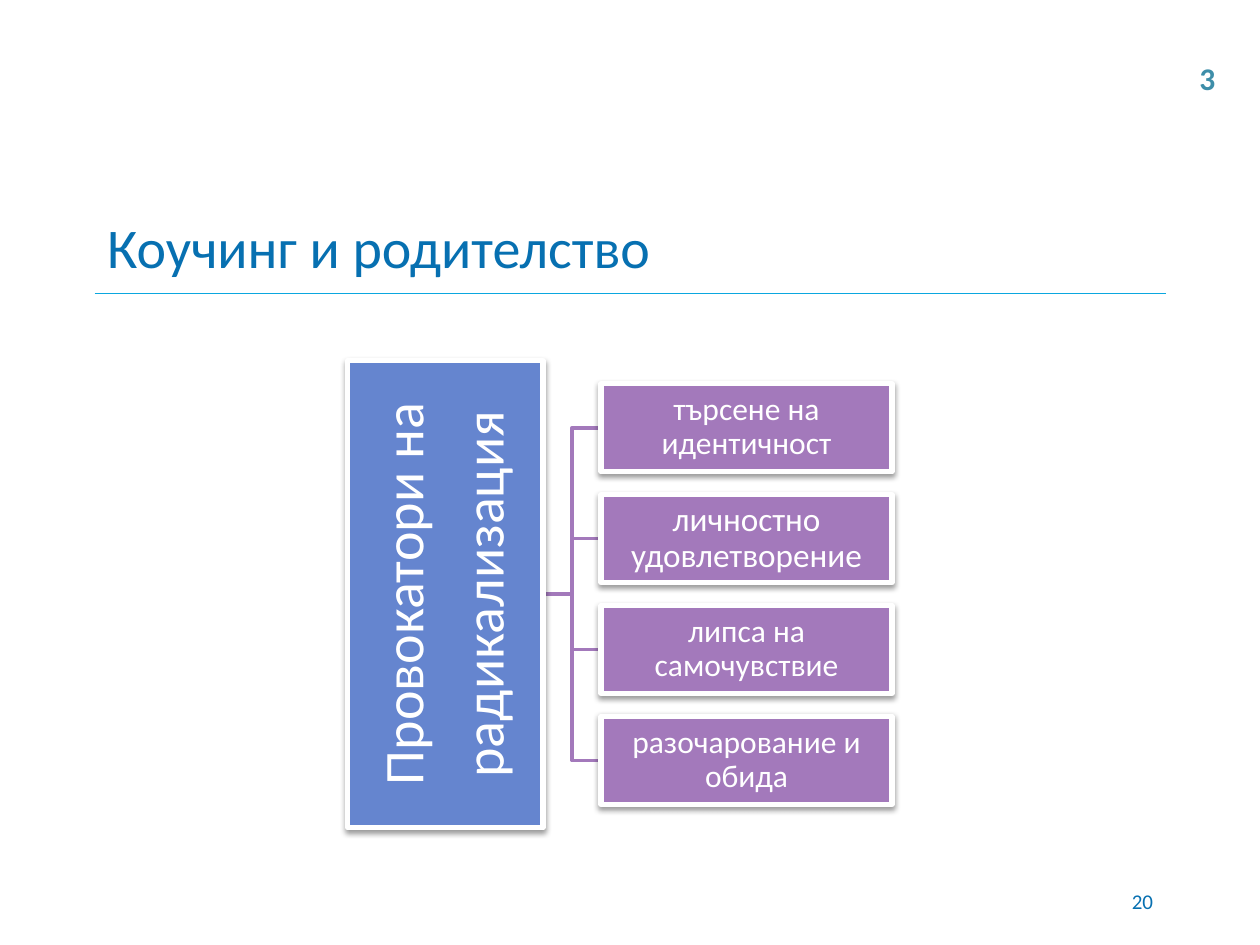
from lxml import etree
from pptx import Presentation
from pptx.dml.color import RGBColor
from pptx.enum.shapes import MSO_CONNECTOR, MSO_SHAPE
from pptx.enum.text import MSO_ANCHOR, PP_ALIGN
from pptx.oxml.ns import qn
from pptx.util import Inches, Pt

LEFT, CENTER, RIGHT = PP_ALIGN.LEFT, PP_ALIGN.CENTER, PP_ALIGN.RIGHT
TOP, MIDDLE = MSO_ANCHOR.TOP, MSO_ANCHOR.MIDDLE
RECTANGLE, STRAIGHT = MSO_SHAPE.RECTANGLE, MSO_CONNECTOR.STRAIGHT

TITLE_BLUE = RGBColor(0x07, 0x70, 0xB1)
RULE_BLUE = RGBColor(0x0B, 0xA7, 0xDF)
NUMBER_TEAL = RGBColor(0x3E, 0x8E, 0xA9)
ROOT_BLUE = RGBColor(0x65, 0x85, 0xCF)
BRANCH_PURPLE = RGBColor(0xA3, 0x79, 0xBB)
WHITE = RGBColor(0xFF, 0xFF, 0xFF)

FONT = "Calibri"
ROOT_LINES = ["Провокатори на", "радикализация"]
BRANCHES = [
    ("търсене на идентичност", 18),
    ("личностно удовлетворение", 19),
    ("липса на самочувствие", 18),
    ("разочарование и обида", 18),
]


def write(shape, lines, size, color, align=LEFT, anchor=MIDDLE, bold=False):
    frame = shape.text_frame
    frame.vertical_anchor = anchor
    frame.text = "\n".join(lines)
    for paragraph in frame.paragraphs:
        paragraph.alignment = align
        font = paragraph.font
        font.name, font.size, font.bold = FONT, Pt(size), bold
        font.color.rgb = color


def add_label(slide, left, top, width, height, text, size, color, **style):
    box = slide.shapes.add_textbox(
        Inches(left), Inches(top), Inches(width), Inches(height))
    write(box, [text], size, color, **style)
    return box


def add_soft_shadow(shape):
    shape.shadow.inherit = False
    effects = shape._element.spPr.find(qn("a:effectLst"))
    shadow = etree.SubElement(
        effects, qn("a:outerShdw"), blurRad=str(Pt(3.1)), dist=str(Pt(1.6)),
        dir="5400000", rotWithShape="0")
    color = etree.SubElement(shadow, qn("a:srgbClr"), val="000000")
    etree.SubElement(color, qn("a:alpha"), val="38000")


def add_node(slide, left, top, width, height, lines, size, fill, inset):
    node = slide.shapes.add_shape(
        RECTANGLE, Inches(left), Inches(top), Inches(width), Inches(height))
    node.fill.solid()
    node.fill.fore_color.rgb = fill
    node.line.color.rgb = WHITE
    node.line.width = Pt(3)
    add_soft_shadow(node)
    write(node, lines, size, WHITE, align=CENTER)
    frame = node.text_frame
    frame.word_wrap = True
    frame.margin_left = frame.margin_right = Inches(inset)
    frame.margin_top = frame.margin_bottom = Inches(inset)
    for paragraph in frame.paragraphs:
        paragraph.line_spacing = 0.9
    for paragraph in frame.paragraphs[:-1]:
        paragraph.space_after = Pt(0.35 * size)
    return node


def add_elbow(slide, start_x, start_y, end_x, end_y):
    middle_x = (start_x + end_x) / 2
    builder = slide.shapes.build_freeform(Inches(start_x), Inches(start_y))
    corners = [(middle_x, start_y), (middle_x, end_y), (end_x, end_y)]
    builder.add_line_segments(
        [(Inches(x), Inches(y)) for x, y in corners], close=False)
    elbow = builder.convert_to_shape()
    elbow.fill.background()
    elbow.line.color.rgb = BRANCH_PURPLE
    elbow.line.width = Pt(2)
    elbow.shadow.inherit = False


def add_hierarchy(slide, left, top, width, height):
    """Vertical root box on the left, joined to a centred column of branches."""
    root_width, branch_width, branch_height, pitch = 1.55, 2.31, 0.7, 0.88
    middle_y = top + height / 2
    branch_left = left + width - branch_width
    first_center = middle_y - pitch * (len(BRANCHES) - 1) / 2
    centers = [first_center + pitch * i for i in range(len(BRANCHES))]

    for center in reversed(centers):
        add_elbow(slide, left + root_width, middle_y, branch_left, center)

    root = add_node(
        slide, left + (root_width - height) / 2, middle_y - root_width / 2,
        height, root_width, ROOT_LINES, 32, ROOT_BLUE, 0.02)
    root.rotation = 270
    for center, (text, size) in zip(centers, BRANCHES):
        add_node(slide, branch_left, center - branch_height / 2, branch_width,
                 branch_height, [text], size, BRANCH_PURPLE, 0.01)


def add_title(slide, left, top, width, height):
    """Title with a thin rule along its lower edge."""
    bottom = Inches(top + height)
    rule = slide.shapes.add_connector(
        STRAIGHT, Inches(left), bottom, Inches(left + width), bottom)
    rule.line.color.rgb = RULE_BLUE
    rule.line.width = Pt(0.75)
    etree.SubElement(rule._element.spPr, qn("a:effectLst"))

    title = slide.shapes.title
    title.left, title.top = Inches(left), Inches(top)
    title.width, title.height = Inches(width), Inches(height)
    write(title, ["Коучинг и родителство"], 32, TITLE_BLUE)


def main():
    presentation = Presentation()
    presentation.slide_width, presentation.slide_height = Inches(10), Inches(7.5)
    slide = presentation.slides.add_slide(presentation.slide_layouts[5])
    add_title(slide, 0.75, 1.58, 8.5, 0.75)
    add_hierarchy(slide, 2.76, 2.86, 4.32, 3.71)
    add_label(slide, 7.17, 6.95, 2.08, 0.4, "20", 12, TITLE_BLUE, align=RIGHT)
    add_label(slide, 9.42, 0.42, 0.33, 0.4, "3", 18, NUMBER_TEAL,
              anchor=TOP, bold=True)
    presentation.save("out.pptx")


if __name__ == "__main__":
    main()
